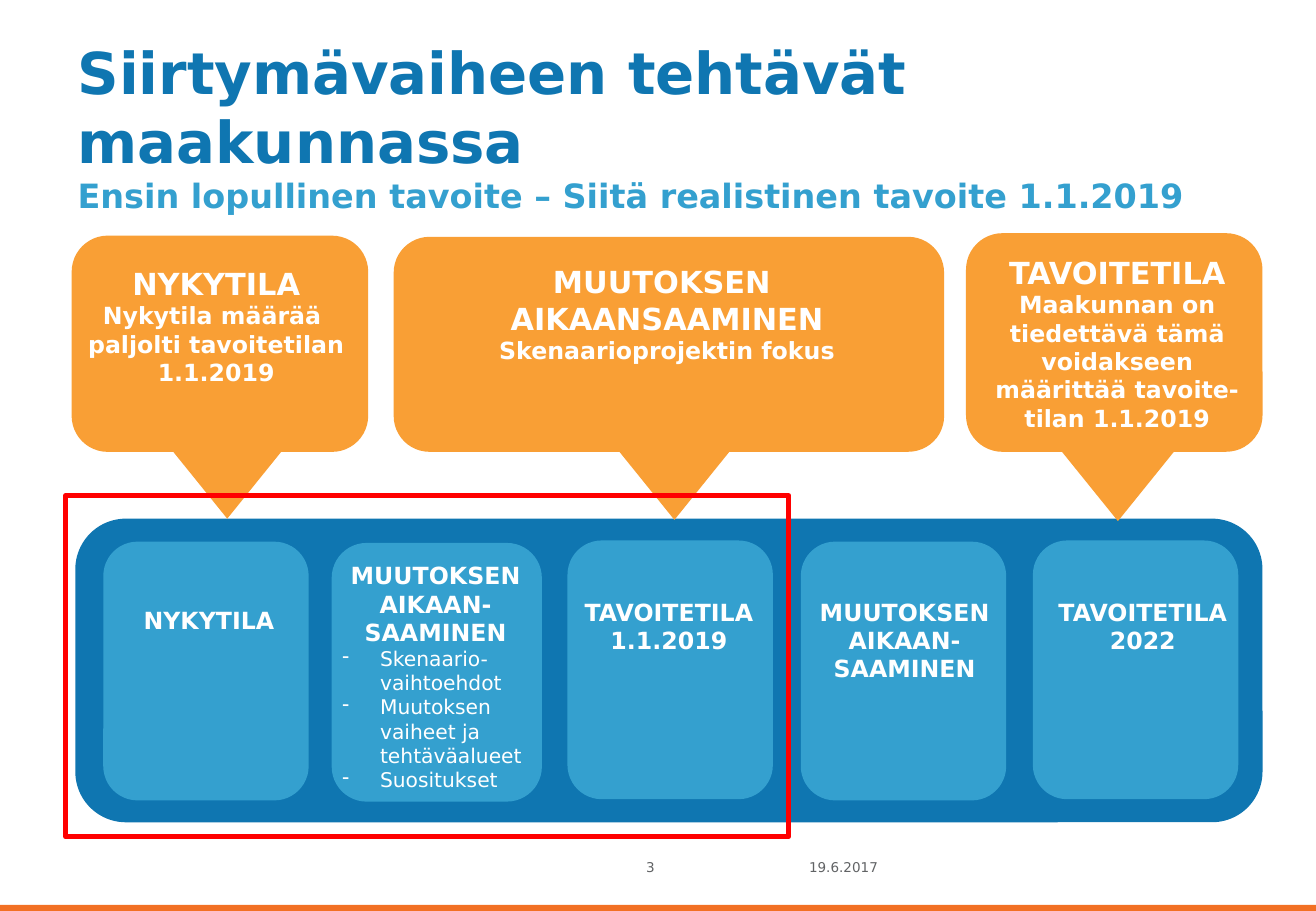
"""Builds a slide on the transition-phase tasks of a county."""
import pptx
import pptx.util
import pptx.dml.color
import pptx.enum.shapes
import pptx.enum.text
import lxml.etree

Inches, Pt = pptx.util.Inches, pptx.util.Pt
SHAPES = pptx.enum.shapes.MSO_SHAPE
ALIGN = pptx.enum.text.PP_ALIGN

COLORS = {"blue": "0F76B1", "sky": "34A0CF", "orange": "F99F35", "bar": "F27024",
          "frame": "FF0000", "white": "FFFFFF", "grey": "616365"}
FONT = "DejaVu Sans"

TITLE = [("Siirtymävaiheen tehtävät maakunnassa", 34.2, "blue"),
         ("Ensin lopullinen tavoite – Siitä realistinen tavoite 1.1.2019", 19.8, "sky")]
FOOTER = [("3", 5.22), ("19.6.2017", 6.56)]

CALLOUTS = [
    {"box": (0.59, 1.94, 2.44, 1.78), "arrow": (1.41, 3.7), "text": (0.56, 2.13, 2.44, 1.11),
     "heading": ["NYKYTILA"],
     "body": ["Nykytila määrää ", "paljolti tavoitetilan 1.1.2019"]},
    {"box": (3.24, 1.95, 4.53, 1.77), "arrow": (5.09, 3.71), "text": (3.04, 2.12, 4.9, 0.94),
     "heading": ["MUUTOKSEN ", "AIKAANSAAMINEN"],
     "body": ["Skenaarioprojektin fokus"]},
    {"box": (7.95, 1.92, 2.44, 1.8), "arrow": (8.74, 3.72), "text": (8.03, 2.04, 2.33, 1.58),
     "heading": ["TAVOITETILA"],
     "body": ["Maakunnan on tiedettävä tämä voidakseen määrittää tavoite-tilan 1.1.2019"]},
]

PHASES = [
    {"box": (0.85, 4.46, 1.69), "text": (0.75, 4.94, 1.94, 0.34), "heading": ["NYKYTILA"]},
    {"box": (2.73, 4.47, 1.73), "text": (2.72, 4.57, 1.73, 2.02),
     "heading": ["MUUTOKSEN AIKAAN-SAAMINEN"],
     "bullets": ["Skenaario-vaihtoehdot", "Muutoksen vaiheet ja tehtäväalueet", "Suositukset"]},
    {"box": (4.67, 4.45, 1.69), "text": (4.52, 4.87, 1.97, 0.57),
     "heading": ["TAVOITETILA", "1.1.2019"]},
    {"box": (6.59, 4.46, 1.69), "text": (6.46, 4.87, 1.97, 0.81),
     "heading": ["MUUTOKSEN AIKAAN-SAAMINEN"]},
    {"box": (8.5, 4.45, 1.69), "text": (8.42, 4.87, 1.97, 0.57),
     "heading": ["TAVOITETILA", "2022"]},
]
PHASE_HEIGHT = 2.13
ARROW_SIZE = (0.92, 0.57)
BULLET_INDENT = 0.31


def rgb(name):
    return pptx.dml.color.RGBColor.from_string(COLORS[name])


def add_block(page, kind, place, fill=None, line=None, rotation=0):
    block = page.shapes.add_shape(kind, *map(Inches, place))
    block.shadow.inherit = False
    block.rotation = rotation
    if fill:
        block.fill.solid()
        block.fill.fore_color.rgb = rgb(fill)
    else:
        block.fill.background()
    if line:
        block.line.color.rgb = rgb(line)
        block.line.width = Pt(3)
    else:
        block.line.fill.background()


def add_box(page, place):
    box = page.shapes.add_textbox(*map(Inches, place))
    box.text_frame.word_wrap = True
    return box.text_frame


def add_text(frame, text, size=14, color="white", bold=True, align=ALIGN.CENTER, bullet=None):
    para = frame.add_paragraph() if frame.paragraphs[0].runs else frame.paragraphs[0]
    para.alignment = align
    if bullet:
        properties = para._p.get_or_add_pPr()
        properties.set("marL", str(Inches(BULLET_INDENT)))
        properties.set("indent", str(-Inches(BULLET_INDENT)))
        mark = lxml.etree.SubElement(properties, pptx.oxml.ns.qn("a:buChar"))
        mark.set("char", bullet)
    span = para.add_run()
    span.text = text
    span.font.name = FONT
    span.font.size = Pt(size)
    span.font.bold = bold
    span.font.color.rgb = rgb(color)


def main():
    deck = pptx.Presentation()
    deck.slide_width, deck.slide_height = Inches(10.83), Inches(7.5)
    page = deck.slides.add_slide(deck.slide_layouts[6])

    for text, left in FOOTER:
        add_text(add_box(page, (left, 7.02, 0.96, 0.4)), text, size=8, color="grey",
                 bold=False, align=ALIGN.LEFT)
    add_block(page, SHAPES.RECTANGLE, (0, 7.45, 10.83, 0.05), fill="bar")

    title = add_box(page, (0.54, 0.25, 9.75, 1.53))
    for text, size, color in TITLE:
        add_text(title, text, size=size, color=color, align=ALIGN.LEFT)

    add_block(page, SHAPES.ROUNDED_RECTANGLE, (0.62, 4.27, 9.77, 2.5), fill="blue")
    for callout in CALLOUTS:
        add_block(page, SHAPES.ROUNDED_RECTANGLE, callout["box"], fill="orange")
        add_block(page, SHAPES.ISOSCELES_TRIANGLE, callout["arrow"] + ARROW_SIZE,
                  fill="orange", rotation=180)
        frame = add_box(page, callout["text"])
        for text in callout["heading"]:
            add_text(frame, text, size=18)
        for text in callout["body"]:
            add_text(frame, text)

    for phase in PHASES:
        add_block(page, SHAPES.ROUNDED_RECTANGLE, phase["box"] + (PHASE_HEIGHT,), fill="sky")
        frame = add_box(page, phase["text"])
        for text in phase["heading"]:
            add_text(frame, text)
        for text in phase.get("bullets", []):
            add_text(frame, text, size=12, bold=False, align=ALIGN.LEFT, bullet="-")

    add_block(page, SHAPES.RECTANGLE, (0.54, 4.08, 5.95, 2.81), line="frame")
    deck.save("out.pptx")


if __name__ == "__main__":
    main()
